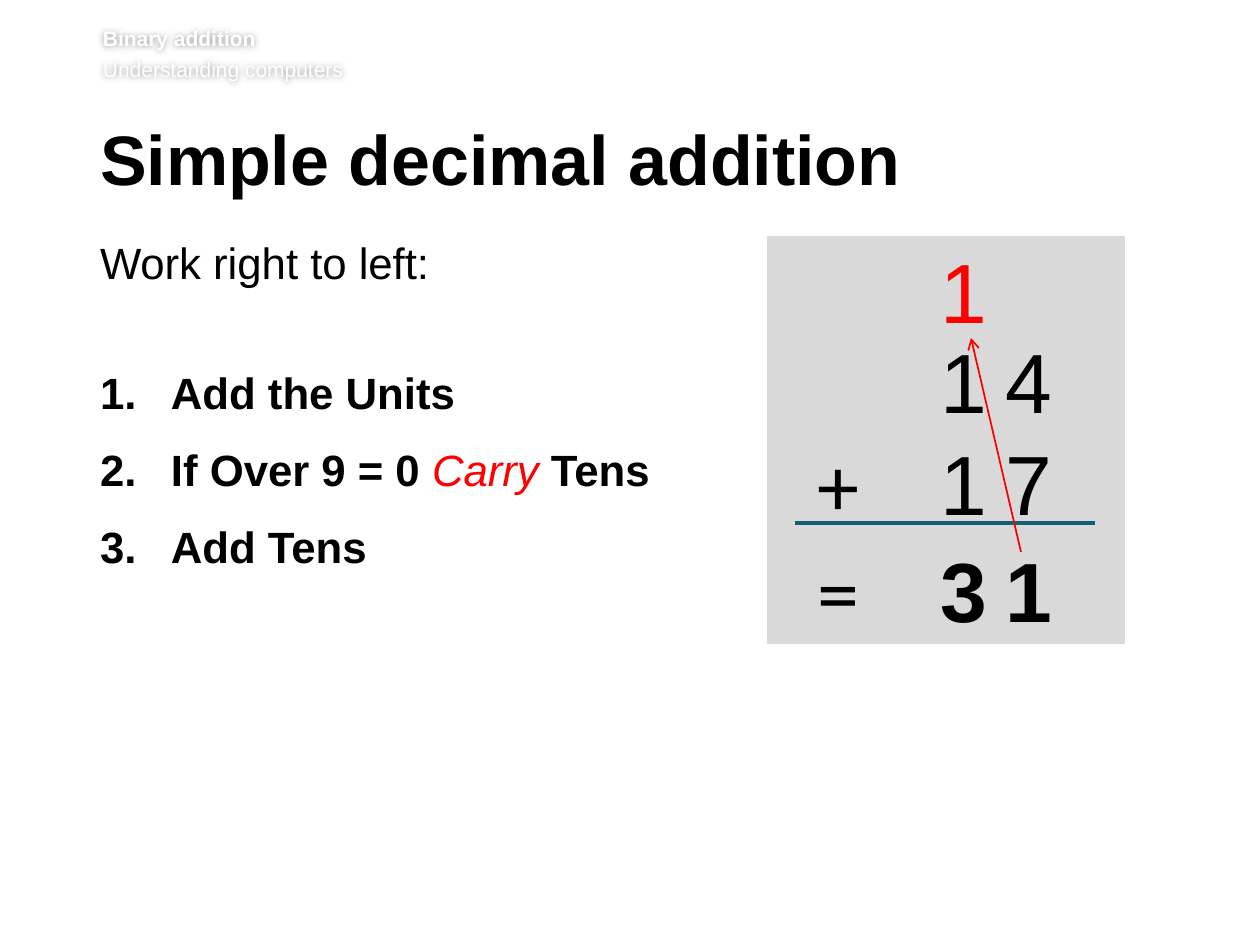
import pptx
import pptx.dml.color
import pptx.enum.shapes
import pptx.enum.text
import pptx.oxml
import pptx.oxml.ns
import pptx.util

PX = 914400 / 126
COLORS = {
    "black": "000000",
    "white": "FFFFFF",
    "red": "FF0000",
    "panel": "D9D9D9",
    "rule": "0F6078",
}
ALIGN = pptx.enum.text.PP_ALIGN


def px(length):
    return pptx.util.Emu(round(length * PX))


def rgb(name):
    return pptx.dml.color.RGBColor.from_string(COLORS[name])


def xml(tag, attributes="", children=""):
    namespace = pptx.oxml.ns.nsdecls("a")
    return pptx.oxml.parse_xml(f"<a:{tag} {namespace} {attributes}>{children}</a:{tag}>")


def add_run(paragraph, text, size=25, font="Arial", color="black", bold=False, italic=False):
    run = paragraph.add_run()
    run.text = text
    run.font.size = pptx.util.Pt(size)
    run.font.name = font
    run.font.bold = bold
    run.font.italic = italic
    run.font.color.rgb = rgb(color)


def set_frame(shape, insets, wrap=True):
    """Anchor the text at the top, with insets (left, top, right, bottom) in px."""
    frame = shape.text_frame
    frame.word_wrap = wrap
    frame.auto_size = pptx.enum.text.MSO_AUTO_SIZE.NONE
    frame.vertical_anchor = pptx.enum.text.MSO_ANCHOR.TOP
    frame.margin_left, frame.margin_top, frame.margin_right, frame.margin_bottom = map(px, insets)
    return frame


def place(shape, left, top, width, height):
    shape.left, shape.top, shape.width, shape.height = map(px, (left, top, width, height))


def add_header(slide, left, top, width, height):
    box = slide.shapes.add_textbox(*map(px, (left, top, width, height)))
    frame = set_frame(box, (0, 0, 0, 6))
    first = frame.paragraphs[0]
    add_run(first, "Binary addition", size=12, color="white", bold=True)
    second = frame.add_paragraph()
    second.space_before = pptx.util.Pt(2.9)
    add_run(second, "Understanding computers", size=12, color="white")
    frame.margin_top = pptx.util.Pt(2.9)
    shadow = (
        '<a:outerShdw blurRad="50800" dist="0" dir="0" algn="ctr" rotWithShape="0">'
        '<a:srgbClr val="000000"><a:alpha val="40000"/></a:srgbClr></a:outerShdw>'
    )
    box._element.spPr.append(xml("effectLst", children=shadow))


def fill_title(title, left, top, width, height):
    place(title, left, top, width, height)
    paragraph = set_frame(title, (0, 6, 13, 6)).paragraphs[0]
    paragraph.alignment = ALIGN.LEFT
    paragraph.line_spacing = pptx.util.Pt(39)
    add_run(paragraph, "Simple decimal addition", size=40, bold=True)


def fill_steps(body, left, top, width, height):
    place(body, left, top, width, height)
    frame = set_frame(body, (0, 2, 13, 6))
    bold = {"bold": True}
    lines = [
        [("Work right to left:", {})],
        [("Add the Units", bold)],
        [("If Over 9 = 0 ", bold), ("Carry", {"color": "red", "italic": True}), (" Tens", bold)],
        [("Add Tens", bold)],
    ]
    for index, runs in enumerate(lines):
        paragraph = frame.add_paragraph() if index else frame.paragraphs[0]
        paragraph.line_spacing = pptx.util.Pt(30)
        paragraph.space_before = pptx.util.Pt(0)
        paragraph.space_after = pptx.util.Pt(14 if index else 44)
        properties = paragraph._p.get_or_add_pPr()
        indent = px(71) if index else 0
        properties.set("marL", str(indent))
        properties.set("indent", str(-indent))
        if index:
            properties.append(xml("buFont", 'typeface="+mj-lt"'))
            properties.append(xml("buAutoNum", 'type="arabicPeriod"'))
        else:
            properties.append(xml("buNone"))
        for text, options in runs:
            add_run(paragraph, text, **options)


def add_line(shapes, start, end, color, width, arrow=False):
    straight = pptx.enum.shapes.MSO_CONNECTOR.STRAIGHT
    line = shapes.add_connector(straight, *map(px, (*start, *end)))
    line.line.color.rgb = rgb(color)
    line.line.width = pptx.util.Pt(width)
    if arrow:
        line.line._get_or_add_ln().append(xml("tailEnd", 'type="arrow"'))
    line._element.spPr.append(xml("effectLst"))


def add_sum(slide, left, top, width, height):
    shapes = slide.shapes.add_group_shape().shapes
    rectangle = pptx.enum.shapes.MSO_SHAPE.RECTANGLE
    panel = shapes.add_shape(rectangle, *map(px, (left, top, width, height)))
    panel.shadow.inherit = False
    panel.fill.solid()
    panel.fill.fore_color.rgb = rgb("panel")
    panel.line.color.rgb = rgb("white")
    panel.line.width = pptx.util.Pt(2)

    def add_glyph(text, x, y, glyph_width=73, glyph_height=115, **options):
        box = shapes.add_textbox(*map(px, (left + x, top + y, glyph_width, glyph_height)))
        paragraph = set_frame(box, (13, 6, 13, 6), wrap=False).paragraphs[0]
        paragraph.alignment = ALIGN.CENTER
        add_run(paragraph, text, size=48, **options)

    tens, units = 162, 227
    rows = [("", "14", 90, False), ("+", "17", 192, False), ("=", "31", 299, True)]
    for sign, digits, y, bold in rows:
        for digit, x in zip(digits, (tens, units)):
            add_glyph(digit, x, y, bold=bold)
        if sign:
            add_glyph(sign, 45, y, 57, 106, font="Calibri")
    add_line(shapes, (left + 30, top + 289), (left + 330, top + 289), "rule", 2.25)
    add_glyph("1", tens, 0, color="red")
    add_line(shapes, (left + 256, top + 318), (left + 206, top + 104), "red", 1, arrow=True)


def main():
    presentation = pptx.Presentation()
    presentation.slide_width, presentation.slide_height = px(1260), px(945)
    slide = presentation.slides.add_slide(presentation.slide_layouts[1])
    add_header(slide, 103, 21, 1111, 62)
    fill_title(slide.shapes.title, 100, 125, 1077, 92)
    fill_steps(slide.placeholders[1], 100, 234, 568, 476)
    add_sum(slide, 765, 234, 362, 412)
    presentation.save("out.pptx")


if __name__ == "__main__":
    main()
